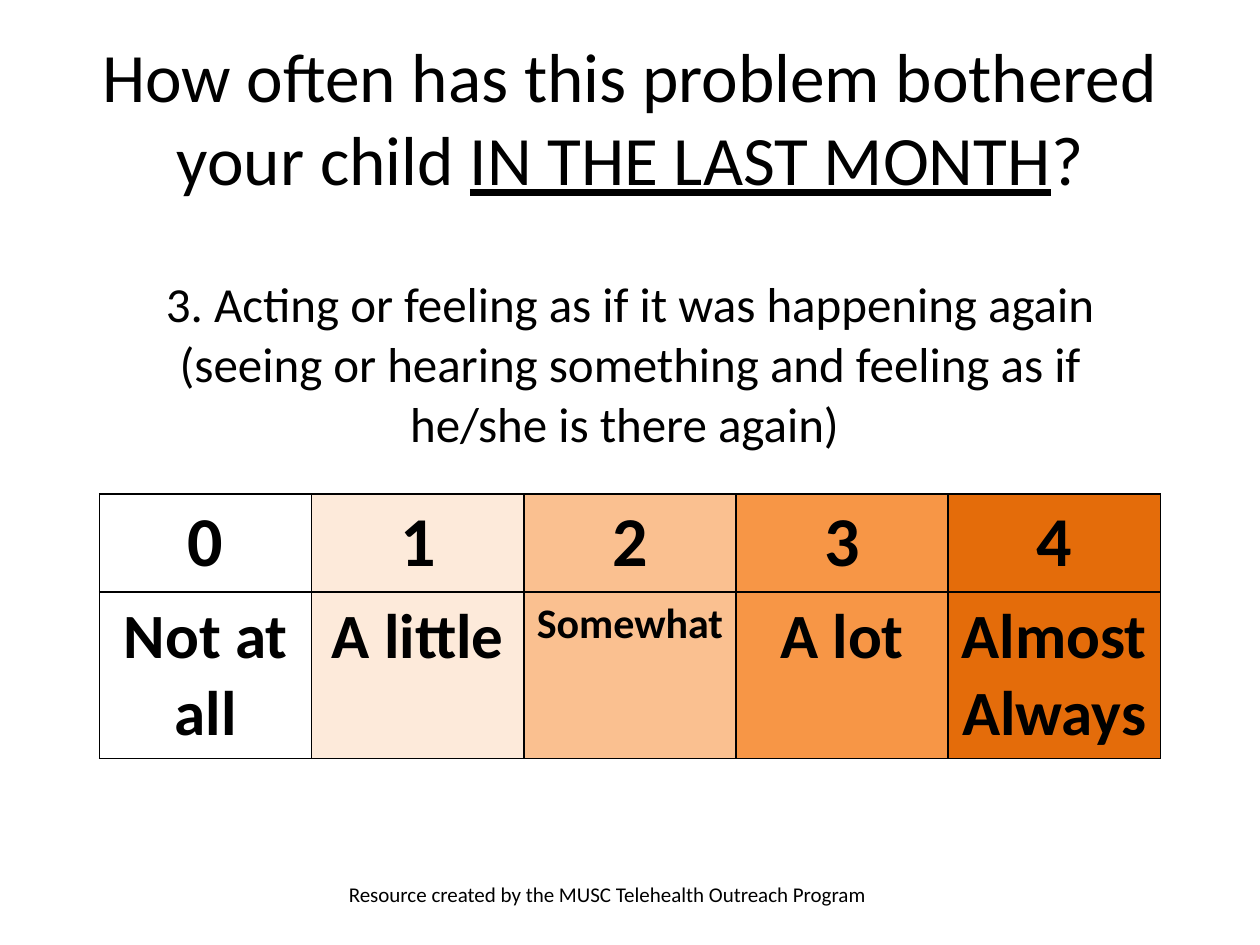
from lxml import etree
from pptx import Presentation
from pptx.dml.color import RGBColor
from pptx.enum.text import MSO_ANCHOR, MSO_AUTO_SIZE, PP_ALIGN
from pptx.oxml.ns import qn
from pptx.util import Inches, Pt

CENTER = PP_ALIGN.CENTER
LEFT = PP_ALIGN.LEFT
MIDDLE = MSO_ANCHOR.MIDDLE
NO_FIT = MSO_AUTO_SIZE.NONE
TITLE_ONLY = 5

FONT = "Calibri"
COLORS = {
    "text": "000000",
    "border": "000000",
    "0": "FFFFFF",
    "1": "FDEADA",
    "2": "FAC090",
    "3": "F79646",
    "4": "E46C0A",
}
SCALE = [
    ("0", "Not at all", 36),
    ("1", "A little", 36),
    ("2", "Somewhat", 24),
    ("3", "A lot", 36),
    ("4", "Almost Always", 36),
]
TABLE_LEFT, TABLE_WIDTH = 0.79, 8.42
ROW_HEIGHTS = [0.78, 1.32]


def style_paragraph(para, size, align=CENTER, bold=False):
    para.alignment = align
    para.font.name = FONT
    para.font.size = Pt(size)
    para.font.bold = bold
    para.font.color.rgb = RGBColor.from_string(COLORS["text"])


def add_title(page, parts):
    title = page.shapes.title
    title.left, title.top = Inches(0.5), Inches(0.3)
    title.width, title.height = Inches(9), Inches(1.25)
    frame = title.text_frame
    frame.auto_size = NO_FIT
    frame.vertical_anchor = MIDDLE
    para = frame.paragraphs[0]
    for text, underlined in parts:
        span = para.add_run()
        span.text = text
        if underlined:
            span.font.underline = True
    style_paragraph(para, 39.6)


def add_table(page, top, row_heights, column_count):
    frame = page.shapes.add_table(
        len(row_heights), column_count, Inches(TABLE_LEFT), Inches(top),
        Inches(TABLE_WIDTH), Inches(sum(row_heights)))
    table = frame.table
    table.first_row = False
    table.horz_banding = False
    for row, height in zip(table.rows, row_heights):
        row.height = Inches(height)
    return table


def add_borders(cell):
    properties = cell._tc.get_or_add_tcPr()
    for position, side in enumerate(("a:lnL", "a:lnR", "a:lnT", "a:lnB")):
        line = etree.Element(qn(side), w=str(Pt(1)))
        fill = etree.SubElement(line, qn("a:solidFill"))
        etree.SubElement(fill, qn("a:srgbClr"), val=COLORS["border"])
        properties.insert(position, line)


def fill_scale_cell(cell, text, size, color):
    cell.text = text
    style_paragraph(cell.text_frame.paragraphs[0], size, bold=True)
    cell.fill.solid()
    cell.fill.fore_color.rgb = RGBColor.from_string(color)
    add_borders(cell)


def add_question(page, text):
    cell = add_table(page, 2.19, [1.4], 1).cell(0, 0)
    cell.text = text
    cell.fill.background()
    cell.margin_left = cell.margin_right = Inches(0.05)
    cell.margin_top = cell.margin_bottom = 0
    style_paragraph(cell.text_frame.paragraphs[0], 28)


def add_scale(page):
    table = add_table(page, 3.92, ROW_HEIGHTS, len(SCALE))
    for column, (score, label, label_size) in enumerate(SCALE):
        fill_scale_cell(table.cell(0, column), score, 40, COLORS[score])
        fill_scale_cell(table.cell(1, column), label, label_size, COLORS[score])


def add_credit(page, text):
    box = page.shapes.add_textbox(
        Inches(2.67), Inches(6.95), Inches(4.5), Inches(0.4))
    box.text_frame.word_wrap = True
    box.text_frame.text = text
    style_paragraph(box.text_frame.paragraphs[0], 12, LEFT)


def main():
    deck = Presentation()
    deck.slide_width, deck.slide_height = Inches(10), Inches(7.5)
    page = deck.slides.add_slide(deck.slide_layouts[TITLE_ONLY])
    add_title(page, [
        ("How often has this problem bothered your child ", False),
        ("IN THE LAST MONTH", True),
        ("?", False),
    ])
    add_credit(page, "Resource created by the MUSC Telehealth Outreach Program")
    add_scale(page)
    add_question(
        page,
        "3. Acting or feeling as if it was happening again (seeing or hearing "
        "something and feeling as if he/she is there again) ")
    deck.save("out.pptx")


if __name__ == "__main__":
    main()
